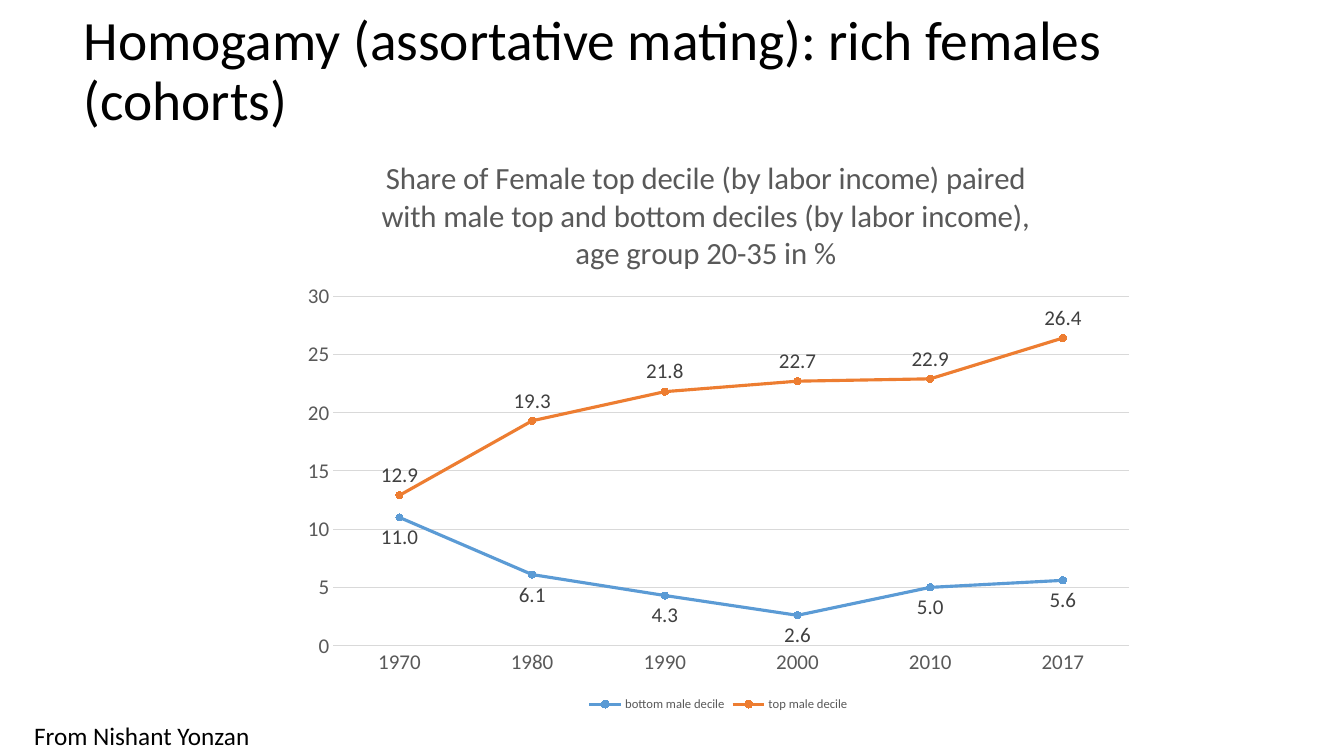
from dataclasses import dataclass

import pptx
import pptx.chart.data
import pptx.dml.color
import pptx.enum.chart
import pptx.enum.text
import pptx.oxml
import pptx.oxml.ns
import pptx.util
from pptx.util import Inches

FONT = "Calibri"
COLORS = {
    "text": "000000",
    "axis": "595959",
    "label": "404040",
    "grid": "D9D9D9",
    "bottom": "5B9BD5",
    "top": "ED7D31",
}
YEARS = ["1970", "1980", "1990", "2000", "2010", "2017"]
CHART_TITLE = (
    "Share of Female top decile (by labor income) paired with male top and "
    "bottom deciles (by labor income), age group 20-35 in %"
)
LABEL = pptx.enum.chart.XL_LABEL_POSITION


@dataclass
class Decile:
    name: str
    shares: list[float]
    color: str
    label_position: LABEL


DECILES = [
    Decile("bottom male decile", [11.0, 6.1, 4.3, 2.6, 5.0, 5.6], "bottom", LABEL.BELOW),
    Decile("top male decile", [12.9, 19.3, 21.8, 22.7, 22.9, 26.4], "top", LABEL.ABOVE),
]


def rgb(color: str) -> pptx.dml.color.RGBColor:
    return pptx.dml.color.RGBColor.from_string(COLORS[color])


def set_font(font, size: float, color: str) -> None:
    font.name = FONT
    font.size = pptx.util.Pt(size)
    font.bold = False
    font.color.rgb = rgb(color)


def set_line(line, color: str, width: float) -> None:
    line.color.rgb = rgb(color)
    line.width = pptx.util.Pt(width)


def add_text(slide, text: str, *, left: float, top: float, width: float, height: float,
             size: float, anchor=pptx.enum.text.MSO_ANCHOR.TOP, spacing: float = 1.0) -> None:
    box = slide.shapes.add_textbox(Inches(left), Inches(top), Inches(width), Inches(height))
    tf = box.text_frame
    tf.word_wrap = True
    tf.vertical_anchor = anchor
    p = tf.paragraphs[0]
    p.line_spacing = spacing
    r = p.add_run()
    r.text = text
    set_font(r.font, size, "text")


def place(element, index: int, **fractions: float) -> None:
    for old in element.findall(pptx.oxml.ns.qn("c:layout")):
        element.remove(old)
    target = '<c:layoutTarget val="inner"/>' if "w" in fractions else ""
    modes = "".join(f'<c:{key}Mode val="edge"/>' for key in "xy")
    values = "".join(f'<c:{key} val="{value}"/>' for key, value in fractions.items())
    element.insert(index, pptx.oxml.parse_xml(
        f'<c:layout {pptx.oxml.ns.nsdecls("c")}><c:manualLayout>'
        f"{target}{modes}{values}</c:manualLayout></c:layout>"))


def style_axes(chart) -> None:
    for axis in (chart.category_axis, chart.value_axis):
        axis.major_tick_mark = pptx.enum.chart.XL_TICK_MARK.NONE
        axis.minor_tick_mark = pptx.enum.chart.XL_TICK_MARK.NONE
        set_font(axis.tick_labels.font, 15, "axis")
    set_line(chart.category_axis.format.line, "grid", 0.75)
    values = chart.value_axis
    values.minimum_scale, values.maximum_scale, values.major_unit = 0, 30, 5
    values.tick_labels.number_format = "0"
    values.tick_labels.number_format_is_linked = False
    values.format.line.fill.background()
    set_line(values.major_gridlines.format.line, "grid", 0.75)


def style_series(series, decile: Decile) -> None:
    series.smooth = False
    set_line(series.format.line, decile.color, 2.25)
    marker = series.marker
    marker.style = pptx.enum.chart.XL_MARKER_STYLE.CIRCLE
    marker.size = 5
    marker.format.fill.solid()
    marker.format.fill.fore_color.rgb = rgb(decile.color)
    set_line(marker.format.line, decile.color, 0.75)
    labels = series.data_labels
    labels.show_value = True
    labels.position = decile.label_position
    labels.number_format = "0.0"
    labels.number_format_is_linked = False
    set_font(labels.font, 15, "label")


def add_decile_chart(slide) -> None:
    data = pptx.chart.data.CategoryChartData(number_format="0.0")
    data.categories = YEARS
    for decile in DECILES:
        data.add_series(decile.name, decile.shares)
    chart = slide.shapes.add_chart(
        pptx.enum.chart.XL_CHART_TYPE.LINE_MARKERS,
        Inches(2.88), Inches(1.32), Inches(8.49), Inches(5.78), data).chart
    set_font(chart.font, 10, "text")

    p = chart.chart_title.text_frame.paragraphs[0]
    r = p.add_run()
    r.text = CHART_TITLE
    set_font(r.font, 22, "axis")
    place(chart.chart_title.element, 1, x=0.1, y=0.03)
    plot_area = chart.element.find(".//" + pptx.oxml.ns.qn("c:plotArea"))
    place(plot_area, 0, x=0.05, y=0.28, w=0.93, h=0.6)

    chart.has_legend = True
    chart.legend.position = pptx.enum.chart.XL_LEGEND_POSITION.BOTTOM
    chart.legend.include_in_layout = False
    set_font(chart.legend.font, 9, "axis")

    style_axes(chart)
    plot = chart.plots[0]
    plot.vary_by_categories = False
    for series, decile in zip(plot.series, DECILES):
        style_series(series, decile)


def main() -> None:
    prs = pptx.Presentation()
    prs.slide_width, prs.slide_height = Inches(13.33), Inches(7.5)
    slide = prs.slides.add_slide(prs.slide_layouts[6])
    add_text(slide, "Homogamy (assortative mating): rich females (cohorts)",
             left=0.73, top=0.23, width=11.4, height=0.98, size=39.6,
             anchor=pptx.enum.text.MSO_ANCHOR.MIDDLE, spacing=0.9)
    add_text(slide, "From Nishant Yonzan",
             left=0.24, top=7.1, width=4.54, height=0.4, size=18)
    add_decile_chart(slide)
    prs.save("out.pptx")


if __name__ == "__main__":
    main()
